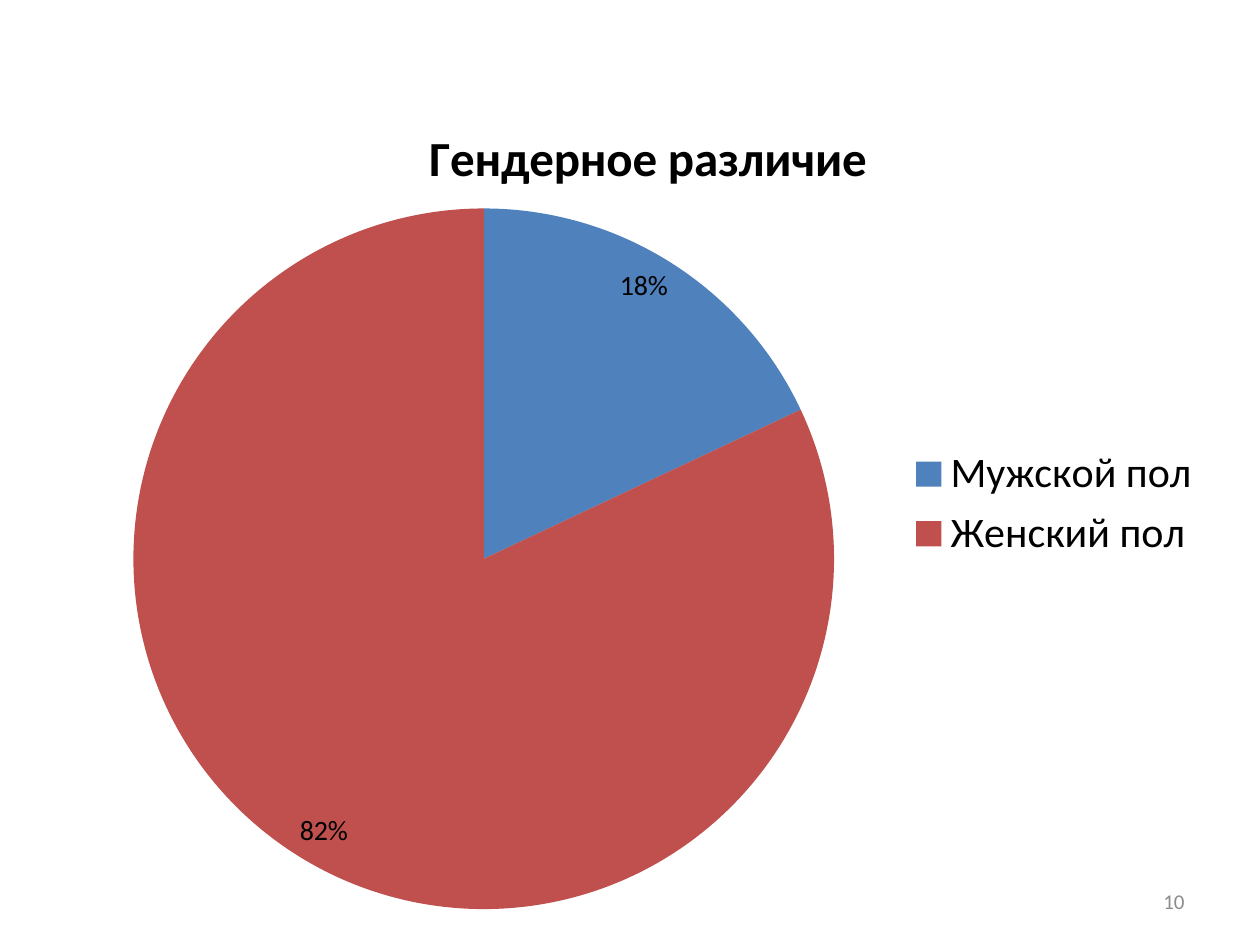
from lxml import etree
from pptx import Presentation
from pptx.chart.data import CategoryChartData
from pptx.dml.color import RGBColor
from pptx.enum import chart as ch, text
from pptx.oxml.ns import qn
from pptx.util import Inches, Pt

# Content
TITLE = "Гендерное различие"
SHARES = [("Мужской пол", 18, "4F81BD"), ("Женский пол", 82, "C0504D")]
PAGE = "10"

THEME = {
    "font": "Calibri", "ink": "000000", "muted": "8C8C8C",
    "title": 28, "legend": 24, "label": 16, "base": 10, "page": 12,
}


def style(font, size, color="ink", bold=False):
    font.name, font.size, font.bold = THEME["font"], Pt(THEME[size]), bold
    font.color.rgb = RGBColor.from_string(THEME[color])


def place(parent, before, **settings):
    """Add a manual layout, as fractions of the chart, ahead of a sibling."""
    for old in parent.findall(qn("c:layout")):
        parent.remove(old)
    layout = etree.Element(qn("c:layout"))
    manual = etree.SubElement(layout, qn("c:manualLayout"))
    for tag, value in settings.items():
        etree.SubElement(manual, qn("c:" + tag)).set("val", str(value))
    parent.find(qn(before)).addprevious(layout)


prs = Presentation()
prs.slide_width, prs.slide_height = Inches(10), Inches(7.5)
s = prs.slides.add_slide(prs.slide_layouts[6])

# Pie chart
data = CategoryChartData()
data.categories = [name for name, _, _ in SHARES]
data.add_series("Series 1", [value for _, value, _ in SHARES])
chart = s.shapes.add_chart(ch.XL_CHART_TYPE.PIE, Inches(0.5), Inches(0.65),
                           Inches(9.15), Inches(6.7), data).chart
style(chart.font, "base")
plot = chart.plots[0]
plot.vary_by_categories = True
for i, (_, _, color) in enumerate(SHARES):
    fill = plot.series[0].points[i].format.fill
    fill.solid()
    fill.fore_color.rgb = RGBColor.from_string(color)

# Percent labels
labels = plot.series[0].data_labels
labels.show_value = False
labels.show_percentage = True
labels.number_format, labels.number_format_is_linked = "0%", False
labels.position = ch.XL_LABEL_POSITION.INSIDE_END
style(labels.font, "label")

# Chart title and legend
chart.has_title = True
tf = chart.chart_title.text_frame
tf.text = TITLE
style(tf.paragraphs[0].runs[0].font, "title", bold=True)
chart.has_legend = True
chart.legend.position = ch.XL_LEGEND_POSITION.RIGHT
chart.legend.include_in_layout = False
style(chart.legend.font, "legend")

# Positions inside the chart
area = chart.element.find(qn("c:chart"))
place(area.find(qn("c:title")), "c:overlay",
      xMode="edge", yMode="edge", x=0.31, y=0.04)
place(area.find(qn("c:plotArea")), "c:pieChart", layoutTarget="inner",
      xMode="edge", yMode="edge", x=0.06, y=0.15, w=0.61, h=0.83)

# Page number
tf = s.shapes.add_textbox(Inches(7.17), Inches(6.95),
                          Inches(2.33), Inches(0.4)).text_frame
tf.word_wrap = True
tf.vertical_anchor = text.MSO_ANCHOR.MIDDLE
tf.text = PAGE
p = tf.paragraphs[0]
p.alignment = text.PP_ALIGN.RIGHT
style(p.runs[0].font, "page", "muted")

prs.save("out.pptx")
